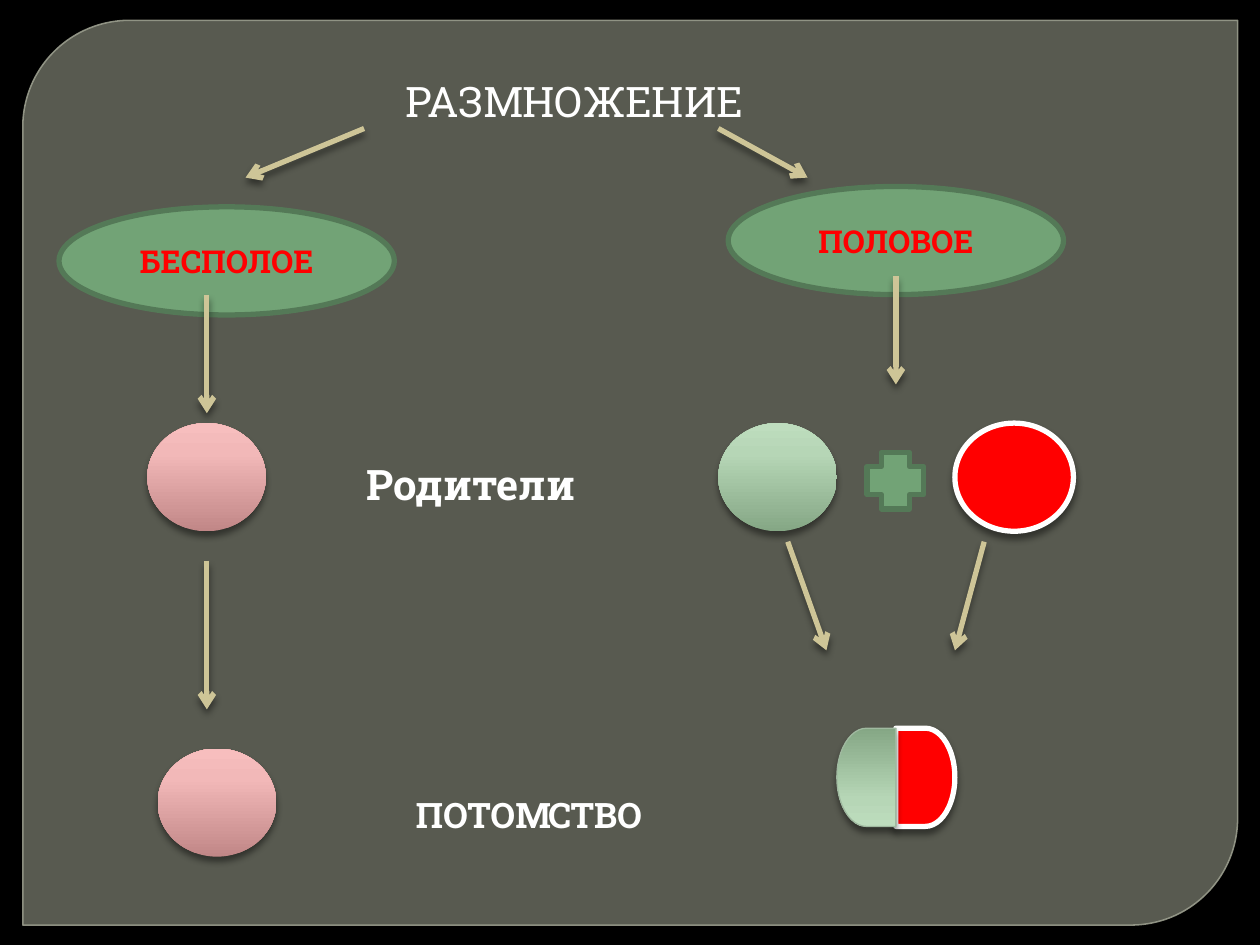
from copy import deepcopy

from lxml import etree
from pptx import Presentation
from pptx.dml import color
from pptx.enum import shapes, text
from pptx.oxml import ns
from pptx import util as u

BLACK = color.RGBColor(0x00, 0x00, 0x00)
WHITE = color.RGBColor(0xFF, 0xFF, 0xFF)
RED = color.RGBColor(0xFF, 0x00, 0x00)
GREEN = color.RGBColor(0x72, 0xA3, 0x76)
DARK_GREEN = color.RGBColor(0x54, 0x79, 0x57)
PALE_GREEN = color.RGBColor(0xA0, 0xB9, 0xA0)
SAND = color.RGBColor(0xCE, 0xC5, 0x97)
OLIVE = color.RGBColor(0x88, 0x8B, 0x7B)
FRAME_EDGE = color.RGBColor(0x9D, 0xA0, 0x90)
PINK_CELL = [color.RGBColor(0xC1, 0x87, 0x87), color.RGBColor(0xF2, 0xB8, 0xB8),
             color.RGBColor(0xF7, 0xBE, 0xBE)]
GREEN_CELL = [color.RGBColor(0x85, 0xA7, 0x85), color.RGBColor(0xB6, 0xD6, 0xB6),
              color.RGBColor(0xBE, 0xDD, 0xBE)]
STOPS = (0, 0.72, 1)

FORM = shapes.MSO_SHAPE
FONT = "Roboto Slab"
OVAL_W, OVAL_H = 6.76, 2.18
CELL_W, CELL_H = 2.39, 2.18
HALF_W, HALF_H = 1.19, 1.98


def apply_format(target, values):
    for attribute, value in values.items():
        setattr(target, attribute, value)


def add_alpha(parent, percent):
    etree.SubElement(parent, ns.qn("a:alpha"), val=str(percent * 1000))


def add_shadow(effects):
    shadow = etree.SubElement(
        effects, ns.qn("a:outerShdw"), blurRad=str(u.Pt(4)), dist=str(u.Pt(3)),
        dir="5400000", rotWithShape="0")
    add_alpha(etree.SubElement(shadow, ns.qn("a:srgbClr"), val=str(BLACK)), 43)


def write(frame, words, size, tint, bold=False, align=text.PP_ALIGN.LEFT,
          anchor=text.MSO_ANCHOR.TOP):
    apply_format(frame, {"text": words, "word_wrap": True, "vertical_anchor": anchor,
                         "auto_size": text.MSO_AUTO_SIZE.NONE})
    frame.paragraphs[0].alignment = align
    run_font = frame.paragraphs[0].runs[0].font
    apply_format(run_font, {"name": FONT, "size": u.Pt(size), "bold": bold})
    run_font.color.rgb = tint


def add_form(slide, form, box, fill, edge=None, width=3, shadow=False):
    figure = slide.shapes.add_shape(form, *map(u.Cm, box))
    figure.shadow.inherit = False
    if isinstance(fill, list):
        figure.fill.gradient()
        figure.fill.gradient_angle = 90
        stop_list = figure.element.spPr.find(".//" + ns.qn("a:gsLst"))
        stop_list.append(deepcopy(stop_list[-1]))
        for stop, tint, position in zip(figure.fill.gradient_stops, fill, STOPS):
            stop.color.rgb = tint
            stop.position = position
    else:
        figure.fill.solid()
        figure.fill.fore_color.rgb = fill
    if edge is None:
        figure.line.fill.background()
    else:
        figure.line.color.rgb = edge
        figure.line.width = u.Pt(width)
    if shadow:
        add_shadow(figure.element.spPr.find(ns.qn("a:effectLst")))
    return figure


def add_arrow(slide, *ends):
    arrow = slide.shapes.add_connector(shapes.MSO_CONNECTOR.STRAIGHT, *map(u.Cm, ends))
    arrow.line.color.rgb = SAND
    arrow.line.width = u.Pt(3)
    outline = arrow.element.spPr
    etree.SubElement(outline.find(ns.qn("a:ln")), ns.qn("a:tailEnd"), type="arrow")
    add_shadow(etree.SubElement(outline, ns.qn("a:effectLst")))


def add_kind(slide, left, top, words):
    oval = add_form(slide, FORM.OVAL, (left, top, OVAL_W, OVAL_H), GREEN, DARK_GREEN)
    write(oval.text_frame, words, 18, RED, True, text.PP_ALIGN.CENTER,
          text.MSO_ANCHOR.MIDDLE)


def add_cell(slide, left, top, fill, edge=None):
    add_form(slide, FORM.OVAL, (left, top, CELL_W, CELL_H), fill, edge, shadow=True)


def add_label(slide, box, words, size):
    label = slide.shapes.add_textbox(*map(u.Cm, box))
    write(label.text_frame, words, size, WHITE, True)


def draw_frame(slide, box):
    panel = add_form(slide, FORM.ROUND_2_DIAG_RECTANGLE, box, OLIVE, FRAME_EDGE, 0.87)
    panel.adjustments[0], panel.adjustments[1] = 0.118, 0
    fill_tint, edge_tint = panel.element.spPr.iter(ns.qn("a:srgbClr"))
    add_alpha(fill_tint, 65)
    add_alpha(edge_tint, 88)
    slide.shapes.element.insert(2, panel.element)


def draw_heading(slide, box):
    left, top, width, height = box
    heading = slide.shapes.title
    place = zip(("left", "top", "width", "height"), map(u.Cm, box))
    apply_format(heading, dict(place))
    write(heading.text_frame, "РАЗМНОЖЕНИЕ", 24, WHITE)
    start, end = top + 1.19, top + 2.18
    add_arrow(slide, left - 0.58, start, left - 2.97, end)
    add_arrow(slide, left + 6.56, start, left + 8.36, end)


def draw_asexual(slide, left, top):
    axis = left + 2.98
    add_kind(slide, left, top, "БЕСПОЛОЕ")
    add_arrow(slide, axis, top + 1.77, axis, top + 4.16)
    add_cell(slide, left + 1.78, top + 4.36, PINK_CELL)
    add_arrow(slide, axis, top + 7.13, axis, top + 10.13)
    add_cell(slide, left + 1.99, top + 10.92, PINK_CELL)


def draw_sexual(slide, left, top):
    axis = left + 3.38
    add_kind(slide, left, top, "ПОЛОВОЕ")
    add_arrow(slide, axis, top + 1.8, axis, top + 3.99)
    parents = top + 4.77
    add_cell(slide, left - 0.2, parents, GREEN_CELL)
    add_cell(slide, left + 4.57, parents, RED, WHITE)
    add_form(slide, FORM.CROSS, (axis - 0.58, parents + 0.59, 1.14, 1.14),
             GREEN, DARK_GREEN)
    add_arrow(slide, left + 1.2, top + 7.16, left + 1.98, top + 9.35)
    add_arrow(slide, left + 5.16, top + 7.16, left + 4.57, top + 9.35)
    child = top + 10.92
    add_form(slide, FORM.FLOWCHART_DELAY, (axis, child, HALF_W, HALF_H),
             RED, WHITE, shadow=True)
    mother_half = add_form(slide, FORM.FLOWCHART_DELAY,
                           (axis - HALF_W, child, HALF_W, HALF_H),
                           GREEN_CELL, PALE_GREEN, 0.75, shadow=True)
    mother_half.rotation = 180


def draw_generations(slide, left, top):
    add_label(slide, (left, top, 8.36, 1.27), "Родители", 24)
    add_label(slide, (left + 0.99, top + 6.76, 9.93, 1.12), "ПОТОМСТВО", 20)


def main():
    deck = Presentation()
    apply_format(deck, {"slide_width": u.Cm(25.4), "slide_height": u.Cm(19.05)})
    slide = deck.slides.add_slide(deck.slide_layouts[5])
    slide.background.fill.solid()
    slide.background.fill.fore_color.rgb = BLACK
    draw_frame(slide, (0.46, 0.41, 24.49, 18.24))
    draw_heading(slide, (7.92, 1.4, 10.11, 1.27))
    draw_asexual(slide, 1.19, 4.17)
    draw_sexual(slide, 14.68, 3.76)
    draw_generations(slide, 7.14, 9.12)
    deck.save("out.pptx")


if __name__ == "__main__":
    main()
